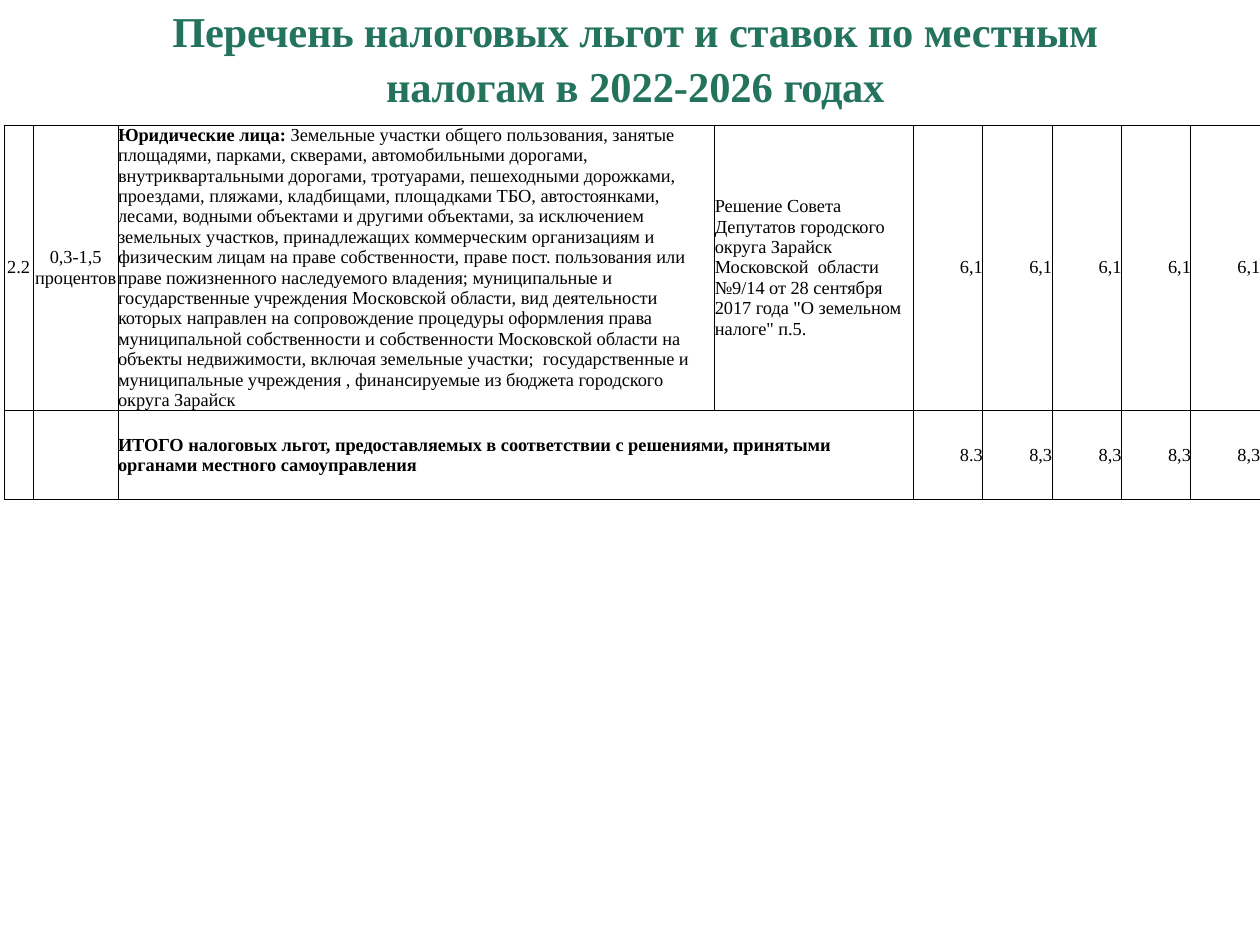
from pptx import Presentation
from pptx.dml.color import RGBColor
from pptx.enum.text import MSO_ANCHOR as ANCHOR, MSO_AUTO_SIZE as AUTO, PP_ALIGN as ALIGN
from pptx.oxml import parse_xml
from pptx.oxml.ns import nsdecls
from pptx.util import Cm, Pt

FONT = "Times New Roman"
COLORS = {"title": "23735D", "text": "000000", "border": "000000"}

# Title runs: text and letter spacing in hundredths of a point
TITLE = [("Перечень налоговых ", -10), ("льгот ", -20), ("и", 0), (" ставок по ", -10),
         ("местным ", 0), ("налогам ", -10), ("в 2022-2026 ", 0), ("годах", -20)]

LAND_LEAD = "Юридические лица:"
LAND_TEXT = " ".join([
    " Земельные участки общего пользования, занятые площадями, парками, скверами,",
    "автомобильными дорогами, внутриквартальными дорогами, тротуарами, пешеходными",
    "дорожками, проездами, пляжами, кладбищами, площадками ТБО, автостоянками, лесами,",
    "водными объектами и другими объектами, за исключением земельных участков,",
    "принадлежащих коммерческим организациям и физическим лицам на праве собственности,",
    "праве пост. пользования или праве пожизненного наследуемого владения; муниципальные",
    "и государственные учреждения Московской области, вид деятельности которых направлен",
    "на сопровождение процедуры оформления права муниципальной собственности и",
    "собственности Московской области на объекты недвижимости, включая земельные",
    "участки;  государственные и муниципальные учреждения , финансируемые из бюджета",
    "городского округа Зарайск"])
DECISION = ("Решение Совета Депутатов городского округа Зарайск Московской  области "
            "№9/14 от 28 сентября 2017 года \"О земельном налоге\" п.5.")
TOTAL = ("ИТОГО налоговых льгот, предоставляемых в соответствии с решениями, "
         "принятыми органами местного самоуправления")

# Each cell is a list of (text, bold) runs
ROWS = [
    [[("2.2", False)], [("0,3-1,5 процентов", False)],
     [(LAND_LEAD, True), (LAND_TEXT, False)], [(DECISION, False)]]
    + [[("6,1", False)]] * 5,
    [[], [], [(TOTAL, True)], [], [("8.3", False)]] + [[("8,3", False)]] * 4,
]
COL_WIDTHS = [0.59, 1.71, 12.03, 4] + [1.4] * 5
ROW_HEIGHTS = [5.21, 1.8]
COL_ALIGN = [ALIGN.CENTER] * 2 + [ALIGN.LEFT] * 2 + [ALIGN.RIGHT] * 5


def add_run(p, text, size, color, bold):
    r = p.add_run()
    r.text = text
    r.font.name, r.font.size, r.font.bold = FONT, Pt(size), bold
    r.font.color.rgb = RGBColor.from_string(COLORS[color])
    return r


def fill_title(sp):
    sp.left, sp.top, sp.width, sp.height = Cm(0.5), Cm(-0.28), Cm(24.61), Cm(3.4)
    tf = sp.text_frame
    tf.word_wrap, tf.auto_size = True, AUTO.NONE
    tf.vertical_anchor = ANCHOR.MIDDLE
    tf.margin_left = tf.margin_right = Cm(2)
    tf.margin_top, tf.margin_bottom = 0, Cm(0.57)
    p = tf.paragraphs[0]
    p.alignment, p.line_spacing = ALIGN.CENTER, 1.08
    p.space_before = Pt(0)
    for text, spacing in TITLE:
        r = add_run(p, text, 24.3, "title", True)
        r.font._element.set("spc", str(spacing))


def set_borders(cell):
    tc_pr = cell._tc.get_or_add_tcPr()
    for i, side in enumerate(("lnL", "lnR", "lnT", "lnB")):
        tc_pr.insert(i, parse_xml(
            f'<a:{side} {nsdecls("a")} w="{Pt(0.5)}"><a:solidFill>'
            f'<a:srgbClr val="{COLORS["border"]}"/></a:solidFill></a:{side}>'))


def fill_cell(cell, runs, align):
    cell.margin_left = cell.margin_right = cell.margin_top = cell.margin_bottom = 0
    cell.vertical_anchor = ANCHOR.MIDDLE
    cell.fill.background()
    set_borders(cell)
    p = cell.text_frame.paragraphs[0]
    p.alignment = align
    for text, bold in runs:
        add_run(p, text, 10.5, "text", bold)


def add_benefits_table(s):
    frame = s.shapes.add_table(len(ROWS), len(COL_WIDTHS), Cm(0.08), Cm(2.52),
                               Cm(sum(COL_WIDTHS)), Cm(sum(ROW_HEIGHTS)))
    table = frame.table
    table.first_row = table.horz_banding = False
    for col, width in zip(table.columns, COL_WIDTHS):
        col.width = Cm(width)
    for row, height, contents in zip(table.rows, ROW_HEIGHTS, ROWS):
        row.height = Cm(height)
        for cell, runs, align in zip(row.cells, contents, COL_ALIGN):
            fill_cell(cell, runs, align)
    # The total label spans the description and decision columns
    table.cell(1, 2).merge(table.cell(1, 3))


def main():
    prs = Presentation()
    prs.slide_width, prs.slide_height = Cm(25.4), Cm(19.05)
    s = prs.slides.add_slide(prs.slide_layouts[5])
    fill_title(s.shapes.title)
    add_benefits_table(s)
    prs.save("out.pptx")


if __name__ == "__main__":
    main()
